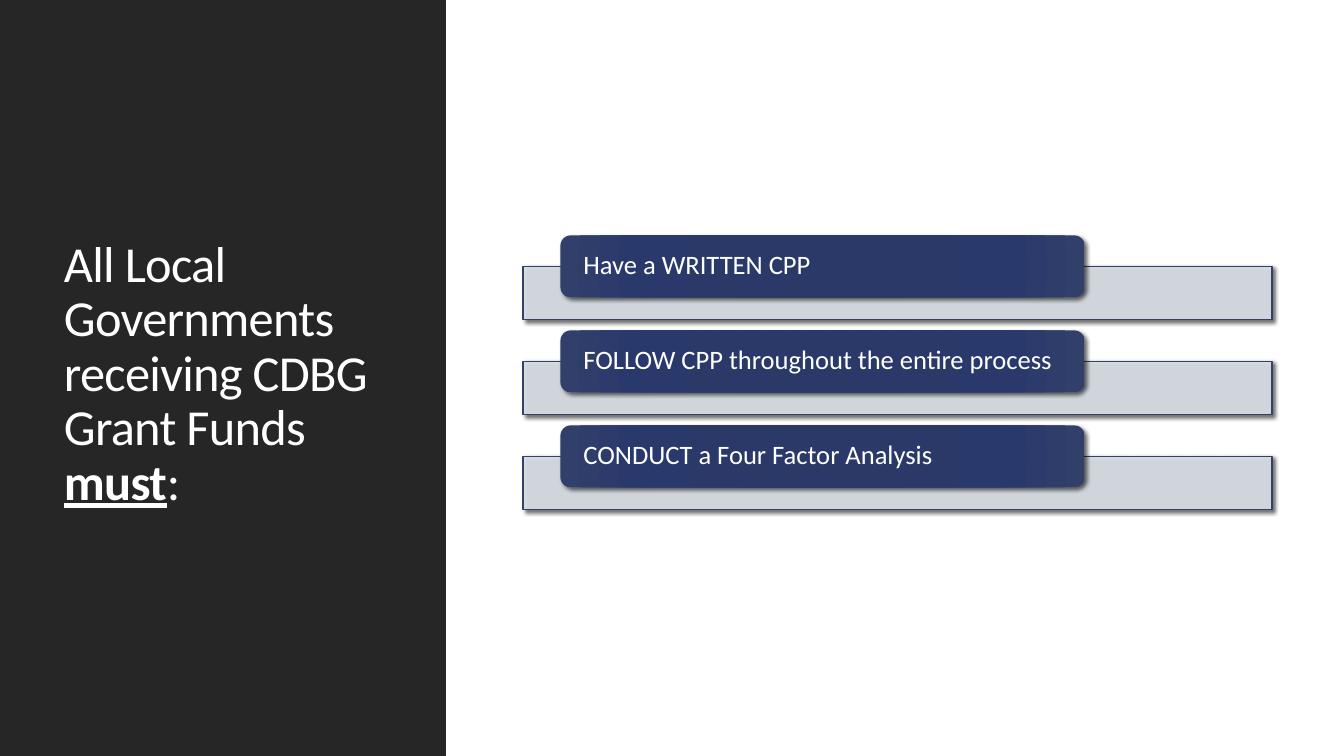
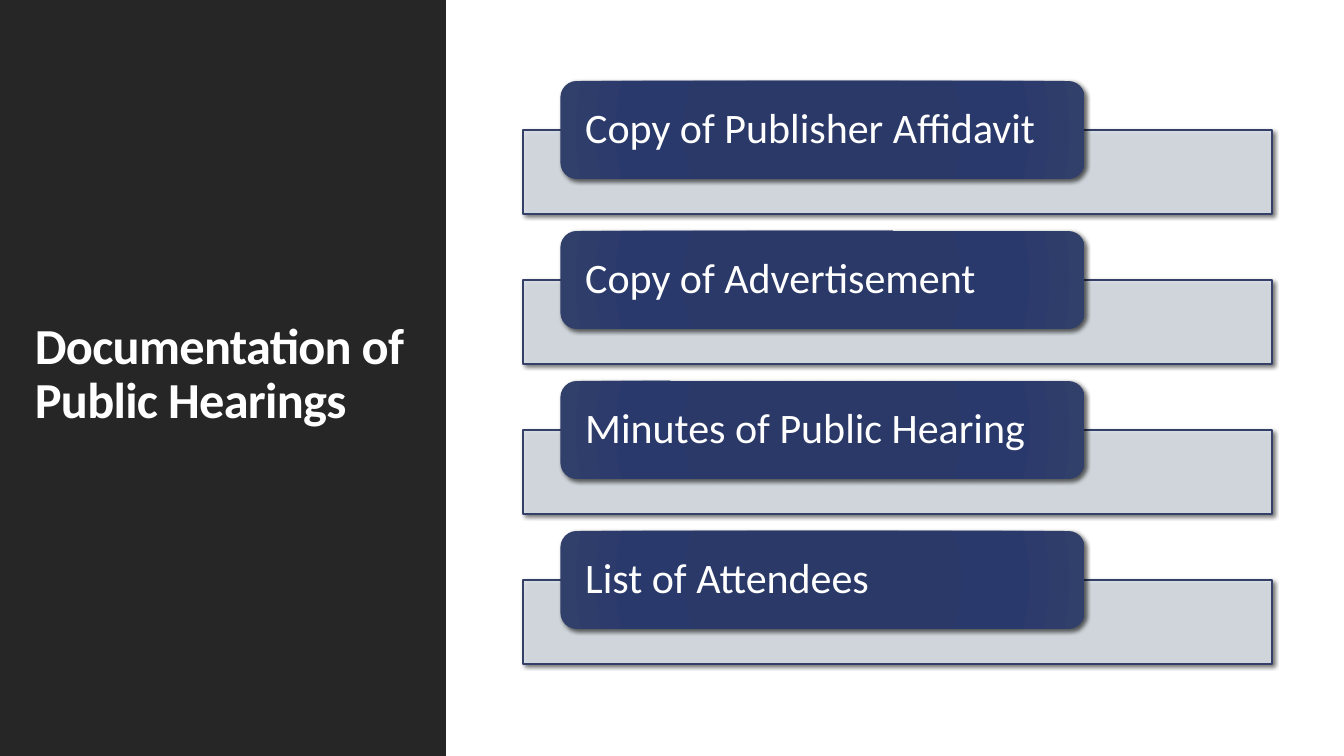
from lxml import etree
from pptx import Presentation
from pptx.dml.color import RGBColor
from pptx.enum.shapes import MSO_SHAPE as SHAPE
from pptx.enum.text import MSO_ANCHOR as ANCHOR, PP_ALIGN as ALIGN
from pptx.oxml import parse_xml
from pptx.oxml.ns import nsdecls, qn
from pptx.util import Emu, Pt

PX = 914400 / 100.8
W, H = 1344, 756
FONT = "Calibri"
COLORS = {
    "panel": "262626",
    "white": "FFFFFF",
    "bar": "D9E0E6",
    "edge": "344068",
    "shadow": "000000",
}
TAB_STOPS = [(0, "293868"), (34, "2B3968"), (70, "2A396B"), (100, "313F6B")]
PANEL_W = 446
STACK_BOX = (523, 81, 749, 583)


def px(*lengths):
    return [Emu(round(n * PX)) for n in lengths]


def rgb(name):
    return RGBColor.from_string(COLORS[name])


def add_block(shapes, kind, box, fill):
    sp = shapes.add_shape(kind, *px(*box))
    sp.shadow.inherit = False
    sp.fill.solid()
    sp.fill.fore_color.rgb = rgb(fill)
    sp.line.fill.background()
    return sp


def add_shadow(sp):
    effects = sp._element.spPr.find(qn("a:effectLst"))
    effects.append(parse_xml(
        f'<a:outerShdw {nsdecls("a")} blurRad="38100" dist="25400" dir="2700000" '
        f'algn="ctr" rotWithShape="0"><a:srgbClr val="{COLORS["shadow"]}">'
        '<a:alpha val="60000"/></a:srgbClr></a:outerShdw>'))


def set_opacity(sp, percent):
    color = sp._element.spPr.find(qn("a:solidFill"))[0]
    etree.SubElement(color, qn("a:alpha"), val=str(percent * 1000))


def set_radial_fill(sp, stops):
    spPr = sp._element.spPr
    gs = "".join(f'<a:gs pos="{pos * 1000}"><a:srgbClr val="{c}"/></a:gs>'
                 for pos, c in stops)
    spPr.replace(spPr.find(qn("a:solidFill")), parse_xml(
        f'<a:gradFill {nsdecls("a")} rotWithShape="1"><a:gsLst>{gs}</a:gsLst>'
        '<a:path path="circle"><a:fillToRect l="100000" t="100000" '
        'r="100000" b="100000"/></a:path></a:gradFill>'))


def style_run(r, size, bold=False, underline=False):
    r.font.name = FONT
    r.font.size = Pt(size)
    r.font.color.rgb = rgb("white")
    r.font.bold = bold
    r.font.underline = underline


# Dark panel on the left with the slide title
def add_title_panel(s, box, runs):
    add_block(s.shapes, SHAPE.RECTANGLE, (0, 0, PANEL_W, H), "panel")
    tf = s.shapes.add_textbox(*px(*box)).text_frame
    tf.word_wrap = True
    tf.vertical_anchor = ANCHOR.MIDDLE
    p = tf.paragraphs[0]
    p.line_spacing = 0.9
    for text, strong, underline in runs:
        r = p.add_run()
        r.text = text
        style_run(r, 36, strong, underline)
        r.font._element.set("spc", "-50")


# One pale bar with a labelled tab over its top edge
def add_tabbed_bar(shapes, x, y, w, tab_h, label, size):
    bar = add_block(shapes, SHAPE.RECTANGLE,
                    (x, y + tab_h / 2, w, tab_h * 6 / 7), "bar")
    set_opacity(bar, 90)
    bar.line.color.rgb = rgb("edge")
    bar.line.width = Pt(1)
    add_shadow(bar)

    tab = add_block(shapes, SHAPE.ROUNDED_RECTANGLE,
                    (x + w * 0.05, y, w * 0.7, tab_h), "edge")
    set_radial_fill(tab, TAB_STOPS)
    add_shadow(tab)
    tf = tab.text_frame
    tf.text = label
    tf.word_wrap = True
    tf.vertical_anchor = ANCHOR.MIDDLE
    tf.margin_left, tf.margin_top, tf.margin_right, tf.margin_bottom = px(20, 0, 20, 0)
    p = tf.paragraphs[0]
    p.alignment = ALIGN.LEFT
    p.line_spacing = 0.9
    style_run(p.runs[0], size)


# Stack of tabbed bars, centred vertically in its box
def add_stack(s, box, labels, tab_h, size):
    x, y, w, h = box
    pitch = round(tab_h * 1.53)
    stack_h = (len(labels) - 1) * pitch + tab_h / 2 + tab_h * 6 / 7
    top = y + (h - stack_h) / 2
    group = s.shapes.add_group_shape()
    for i, label in enumerate(labels):
        add_tabbed_bar(group.shapes, x, top + i * pitch, w, tab_h, label, size)


def add_list_slide(prs, title_box, title, labels, tab_h, size):
    s = prs.slides.add_slide(prs.slide_layouts[6])
    add_title_panel(s, title_box, title)
    add_stack(s, STACK_BOX, labels, tab_h, size)


def main():
    prs = Presentation()
    prs.slide_width, prs.slide_height = px(W, H)
    add_list_slide(
        prs, (54, 57, 340, 636),
        [("All Local Governments receiving CDBG Grant Funds ", False, False),
         ("must", True, True), (":", False, False)],
        ["Have a WRITTEN CPP",
         "FOLLOW CPP throughout the entire process",
         "CONDUCT a Four Factor Analysis"],
        tab_h=62, size=19)
    add_list_slide(
        prs, (25, 57, 403, 636),
        [("Documentation of Public Hearings", True, False)],
        ["Copy of Publisher Affidavit", "Copy of Advertisement",
         "Minutes of Public Hearing", "List of Attendees"],
        tab_h=98, size=30)
    prs.save("out.pptx")


if __name__ == "__main__":
    main()
